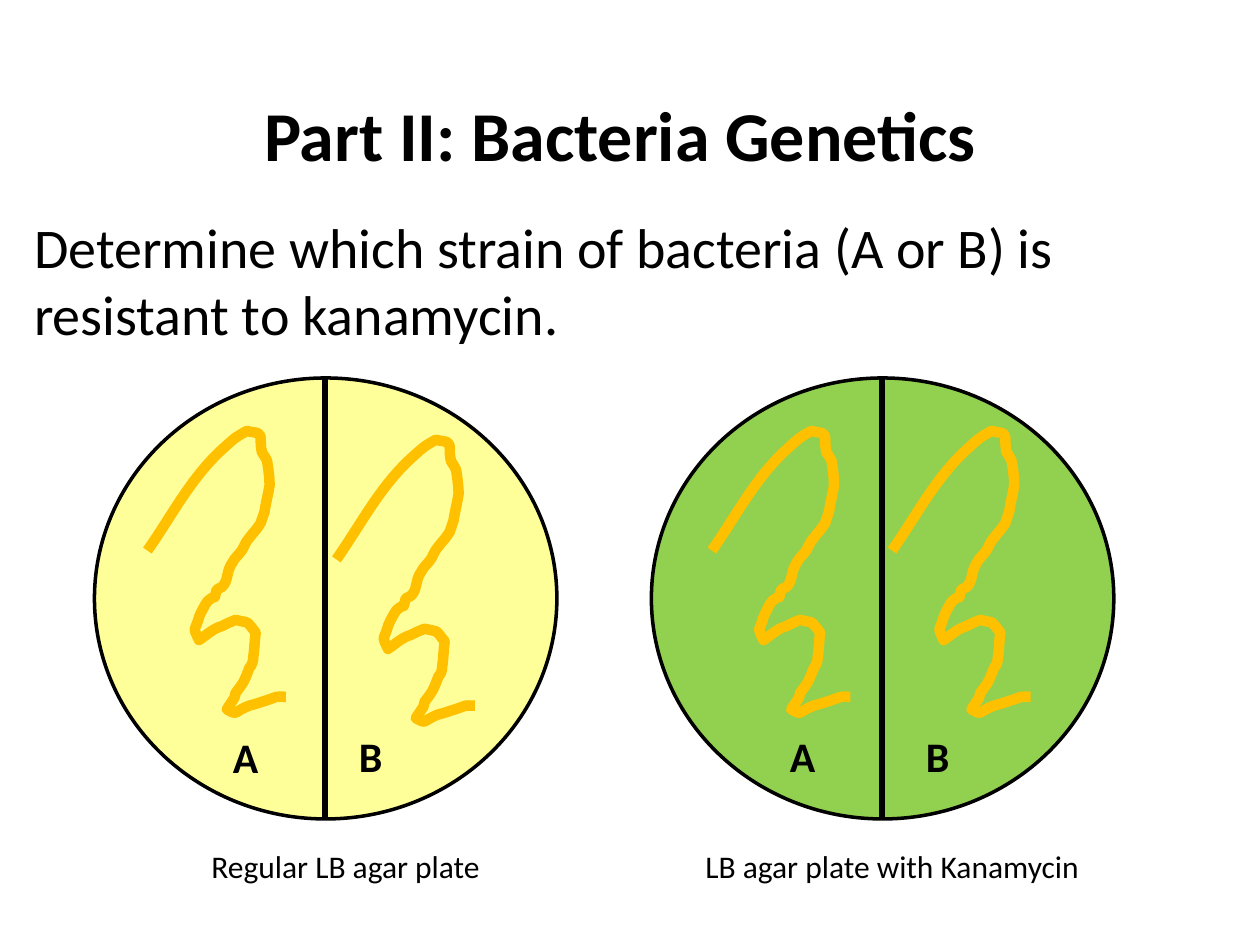
from lxml import etree
from pptx import Presentation, util as u
from pptx.dml.color import RGBColor
from pptx.enum import shapes, text
from pptx.oxml.ns import qn

BLACK = "000000"
AMBER = "FFC000"
TOP, WIDE, HIGH = 3, 3.67, 3.5
# left edge, fill and divider of each plate
PLATES = [(0.75, "FFFF99", 2.58), (5.17, "92D050", 7)]
LABELS = [("A", 1.75, 5.76), ("B", 2.75, 5.75), ("A", 6.17, 5.75), ("B", 7.25, 5.75)]
NOTES = [("Regular LB agar plate", 1.58, 3.33), ("LB agar plate with Kanamycin", 5.5, 3.92)]
# shifts of the four streaks from the first
SHIFTS = [(0, 0), (1.5, 0.07), (4.48, 0), (5.91, 0)]
START = (1.17, 4.37)
# two control points and an end point for each curve, or the end of a line
STEPS = [
    (1.36, 4.1, 1.51, 3.8, 1.76, 3.57), (1.87, 3.47, 1.87, 3.47, 1.96, 3.42),
    (1.99, 3.43, 2.03, 3.43, 2.05, 3.44), (2.07, 3.45, 2.07, 3.47, 2.07, 3.49),
    (2.07, 3.52, 2.07, 3.55, 2.08, 3.59), (2.09, 3.61, 2.11, 3.63, 2.12, 3.66),
    (2.13, 3.72, 2.14, 3.79, 2.14, 3.85), (2.13, 3.92, 2.11, 3.99, 2.1, 4.06),
    (2.09, 4.09, 2.08, 4.12, 2.07, 4.15), (2.05, 4.18, 2.03, 4.21, 2.01, 4.23),
    (2, 4.25, 1.98, 4.26, 1.97, 4.28), (1.96, 4.29, 1.95, 4.31, 1.94, 4.33),
    (1.92, 4.38, 1.89, 4.4, 1.86, 4.44), (1.85, 4.46, 1.84, 4.47, 1.83, 4.49),
    (1.8, 4.54, 1.81, 4.62, 1.76, 4.66), (1.72, 4.68),
    (1.69, 4.79, 1.73, 4.7, 1.65, 4.77), (1.63, 4.79, 1.58, 4.89, 1.58, 4.9),
    (1.54, 5.03, 1.53, 4.97, 1.58, 5.08), (1.64, 5.04, 1.69, 4.99, 1.76, 4.97),
    (1.84, 4.93, 1.8, 4.95, 1.87, 4.92), (1.9, 4.93, 1.93, 4.93, 1.96, 4.94),
    (1.98, 4.95, 2.01, 5, 2.03, 5.02), (2.02, 5.09, 2.02, 5.15, 2.01, 5.22),
    (2.01, 5.25, 2, 5.28, 1.98, 5.3), (1.93, 5.43, 1.93, 5.42, 1.87, 5.5),
    (1.87, 5.52, 1.86, 5.53, 1.86, 5.54), (1.84, 5.57, 1.8, 5.63, 1.8, 5.63),
    (1.9, 5.68, 1.83, 5.66, 1.98, 5.6), (2.02, 5.59, 2.05, 5.58, 2.08, 5.57),
    (2.24, 5.52, 2.16, 5.53, 2.27, 5.53),
]


def color(code):
    return RGBColor.from_string(code)


def stroke(item, code, width):
    item.line.color.rgb = color(code)
    item.line.width = u.Pt(width)


def set_frame(frame):
    frame.word_wrap = True
    frame.auto_size = text.MSO_AUTO_SIZE.NONE
    frame.vertical_anchor = text.MSO_ANCHOR.TOP


def write(para, words, size, bold=False, align=text.PP_ALIGN.LEFT):
    para.alignment = align
    run = para.add_run()
    run.text = words
    run.font.name = "Calibri"
    run.font.size = u.Pt(size)
    run.font.bold = bold
    run.font.color.rgb = color(BLACK)


def add_title(slide, head, task):
    title = slide.shapes.title
    title.left, title.top = u.Inches(0.17), u.Inches(0.08)
    title.width, title.height = u.Inches(9.5), u.Inches(3.06)
    frame = title.text_frame
    set_frame(frame)
    frame.margin_top = u.Inches(0.65)
    write(frame.paragraphs[0], head, 40, True, text.PP_ALIGN.CENTER)
    para = frame.add_paragraph()
    para.space_before = u.Pt(21)
    write(para, task, 32)


def add_text(slide, words, box, size, bold=False):
    frame = slide.shapes.add_textbox(*map(u.Inches, box)).text_frame
    set_frame(frame)
    write(frame.paragraphs[0], words, size, bold)


def add_dish(slide, left, fill):
    dish = slide.shapes.add_shape(
        shapes.MSO_SHAPE.FLOWCHART_CONNECTOR, *map(u.Inches, (left, TOP, WIDE, HIGH)))
    dish.shadow.inherit = False
    dish.fill.solid()
    dish.fill.fore_color.rgb = color(fill)
    stroke(dish, BLACK, 2)


def add_split(slide, mid):
    line = slide.shapes.add_connector(
        shapes.MSO_CONNECTOR.STRAIGHT, *map(u.Inches, (mid, TOP, mid, TOP + HIGH)))
    stroke(line, BLACK, 3)
    etree.SubElement(line._element.spPr, qn("a:effectLst"))


def bend(line, points):
    """Turn a straight segment into a cubic curve with two control points."""
    curve = etree.Element(qn("a:cubicBezTo"))
    for x, y in points:
        etree.SubElement(curve, qn("a:pt"), x=str(int(x)), y=str(int(y)))
    curve.append(line[0])
    line.getparent().replace(line, curve)


def add_streak(slide, dx, dy):
    def shift(x, y):
        return u.Inches(x + dx), u.Inches(y + dy)

    pen = slide.shapes.build_freeform(*shift(*START))
    pen.add_line_segments([shift(*step[-2:]) for step in STEPS], close=False)
    streak = pen.convert_to_shape()
    lines = list(streak._element.iter(qn("a:lnTo")))
    for line, step in zip(lines, STEPS):
        if len(step) == 6:
            grips = [shift(*step[:2]), shift(*step[2:4])]
            bend(line, [(x - streak.left, y - streak.top) for x, y in grips])
    streak.shadow.inherit = False
    streak.fill.background()
    stroke(streak, AMBER, 6)


def main():
    deck = Presentation()
    deck.slide_width, deck.slide_height = u.Inches(10), u.Inches(7.5)
    slide = deck.slides.add_slide(deck.slide_layouts[5])
    add_title(slide, "Part II: Bacteria Genetics",
              "Determine which strain of bacteria (A or B) is resistant to kanamycin.")
    for left, fill, _ in PLATES:
        add_dish(slide, left, fill)
    for _, _, mid in PLATES:
        add_split(slide, mid)
    for words, left, width in NOTES:
        add_text(slide, words, (left, 6.67, width, 0.4), 18)
    for words, left, top in LABELS:
        add_text(slide, words, (left, top, 0.75, 0.5), 24, True)
    for dx, dy in SHIFTS:
        add_streak(slide, dx, dy)
    deck.save("out.pptx")


if __name__ == "__main__":
    main()
